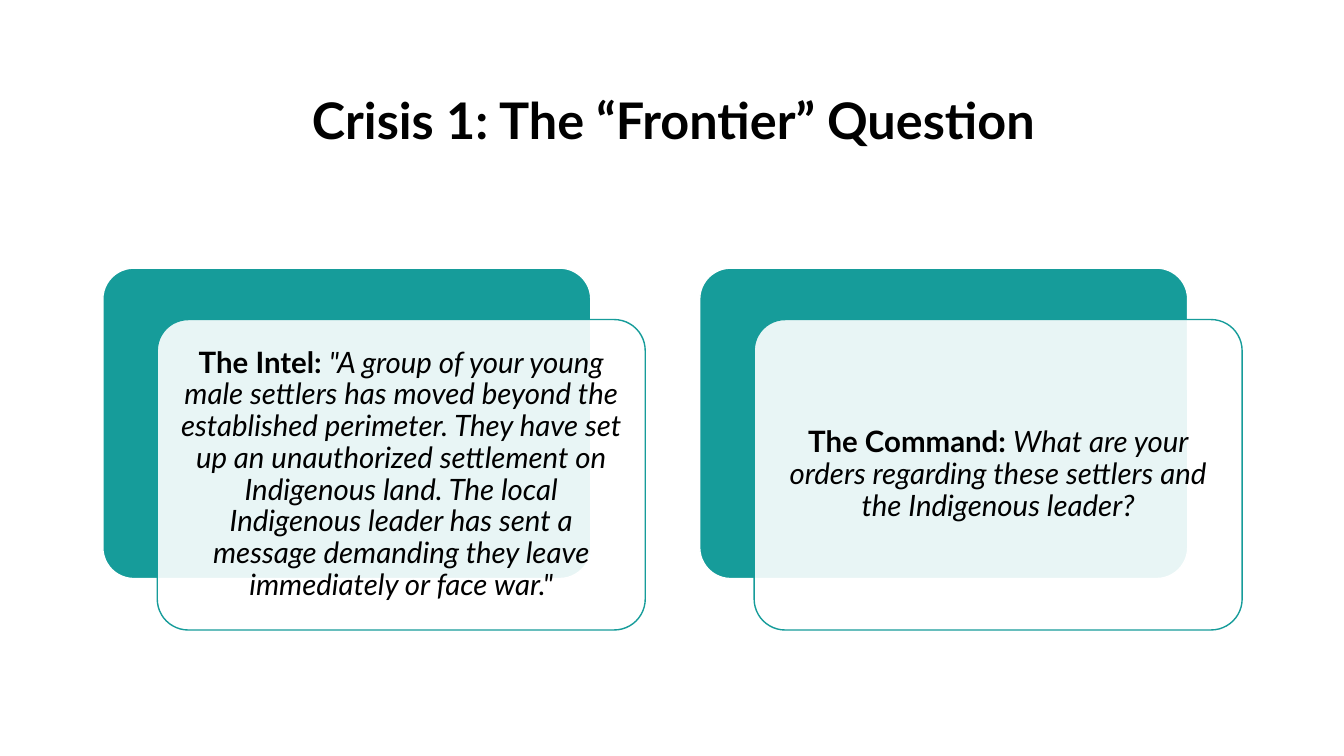
"""Build a slide with a title and two layered text cards."""
from dataclasses import dataclass

from lxml.etree import SubElement
from pptx import Presentation
from pptx.dml.color import RGBColor
from pptx.enum.shapes import MSO_SHAPE
from pptx.enum.text import MSO_ANCHOR, MSO_AUTO_SIZE, PP_ALIGN
from pptx.oxml.ns import qn
from pptx.shapes.autoshape import Shape
from pptx.slide import Slide
from pptx.text.text import TextFrame
from pptx.util import Emu, Pt

FONT = "Lato"
TEAL, WHITE, BLACK = "169C9A", "FFFFFF", "000000"
CARD_W, CARD_H = 484, 308
CARD_LEFT, CARD_TOP, CARD_PITCH = 102, 266, 592
SHIFT_X, SHIFT_Y = 54, 51
INSET = 9


@dataclass
class Run:
    text: str
    size: int
    bold: bool = False
    italic: bool = False


@dataclass
class Card:
    label: str
    body: str


CARDS = [
    Card(
        "The Intel: ",
        '"A group of your young male settlers has moved beyond the established '
        "perimeter. They have set up an unauthorized settlement on Indigenous land. "
        "The local Indigenous leader has sent a message demanding they leave "
        'immediately or face war."',
    ),
    Card(
        "The Command: ",
        "What are your orders regarding these settlers and the Indigenous leader?",
    ),
]


def px(n: int) -> Emu:
    return Emu(n * 9144)


def rgb(color: str) -> RGBColor:
    return RGBColor.from_string(color)


def write(tf: TextFrame, runs: list[Run]) -> None:
    tf.word_wrap = True
    tf.auto_size = MSO_AUTO_SIZE.NONE
    tf.vertical_anchor = MSO_ANCHOR.MIDDLE
    p = tf.paragraphs[0]
    p.alignment = PP_ALIGN.CENTER
    p.line_spacing = 0.9
    for run in runs:
        r = p.add_run()
        r.text = run.text
        r.font.name = FONT
        r.font.size = Pt(run.size)
        r.font.bold = run.bold
        r.font.italic = run.italic
        r.font.color.rgb = rgb(BLACK)


def add_panel(s: Slide, x: int, y: int, fill: str, line: str) -> Shape:
    sp = s.shapes.add_shape(
        MSO_SHAPE.ROUNDED_RECTANGLE, px(x), px(y), px(CARD_W), px(CARD_H)
    )
    sp.adjustments[0] = 0.1
    sp.shadow.inherit = False
    sp.fill.solid()
    sp.fill.fore_color.rgb = rgb(fill)
    sp.line.color.rgb = rgb(line)
    sp.line.width = Pt(1)
    return sp


def set_opacity(sp: Shape, percent: int) -> None:
    color = sp.fill._xPr.find(qn("a:solidFill"))[0]
    SubElement(color, qn("a:alpha")).set("val", str(percent * 1000))


def add_card(s: Slide, card: Card, x: int) -> None:
    add_panel(s, x, CARD_TOP, TEAL, WHITE)
    front = add_panel(s, x + SHIFT_X, CARD_TOP + SHIFT_Y, WHITE, TEAL)
    set_opacity(front, 90)
    tf = front.text_frame
    tf.margin_left = tf.margin_right = tf.margin_top = tf.margin_bottom = px(INSET)
    write(tf, [Run(card.label, 21, bold=True), Run(card.body, 21, italic=True)])


def main() -> None:
    prs = Presentation()
    prs.slide_width, prs.slide_height = px(1333), px(750)
    s = prs.slides.add_slide(prs.slide_layouts[5])
    title = s.shapes.title
    title.left, title.top = px(167), px(60)
    title.width, title.height = px(1002), px(124)
    write(title.text_frame, [Run("Crisis 1: The “Frontier” Question", 36, bold=True)])
    for i, card in enumerate(CARDS):
        add_card(s, card, CARD_LEFT + i * CARD_PITCH)
    prs.save("out.pptx")


if __name__ == "__main__":
    main()
